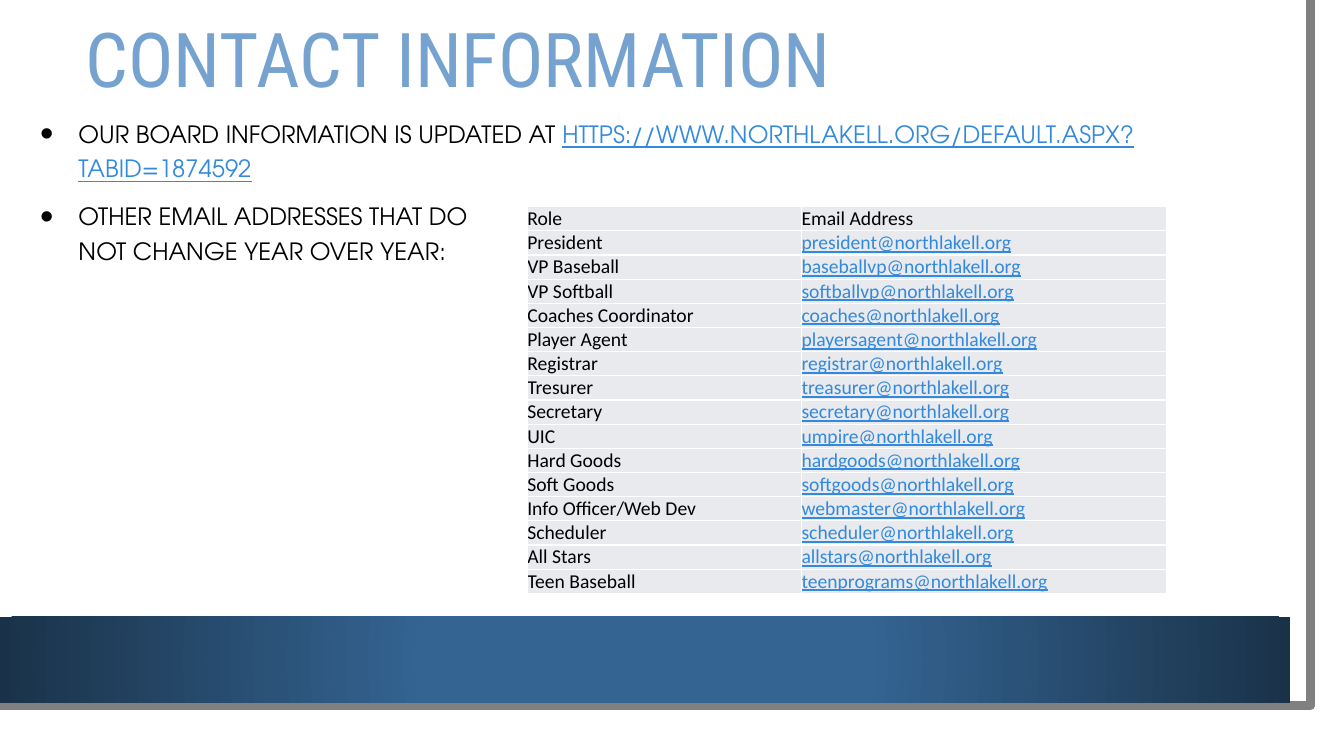
from lxml.etree import SubElement
from pptx import Presentation
from pptx.dml.color import RGBColor
from pptx.enum.shapes import MSO_SHAPE as Preset
from pptx.enum.text import MSO_ANCHOR as Anchor
from pptx.oxml.ns import qn
from pptx.util import Inches, Pt

WIDTH, HEIGHT = 13.33, 7.5
WHITE, BLACK, LINK, CELL = "FFFFFF", "000000", "3289DD", "E8EAEE"
BODY = {"name": "TeX Gyre Adventor", "size": Pt(17)}
TABLE = {"name": "Calibri", "size": Pt(14)}
ROW_HEIGHT = 0.24
COLUMNS = (2.72, 3.62)
CONTACTS = [
    ("President", "president"),
    ("VP Baseball", "baseballvp"),
    ("VP Softball", "softballvp"),
    ("Coaches Coordinator", "coaches"),
    ("Player Agent", "playersagent"),
    ("Registrar", "registrar"),
    ("Tresurer", "treasurer"),
    ("Secretary", "secretary"),
    ("UIC", "umpire"),
    ("Hard Goods", "hardgoods"),
    ("Soft Goods", "softgoods"),
    ("Info Officer/Web Dev", "webmaster"),
    ("Scheduler", "scheduler"),
    ("All Stars", "allstars"),
    ("Teen Baseball", "teenprograms"),
]


def color(hex_string):
    return RGBColor.from_string(hex_string)


def box(*lengths):
    return [Inches(length) for length in lengths]


def add_run(paragraph, text, look, ink=BLACK):
    run = paragraph.add_run()
    run.text = text
    for key, value in look.items():
        setattr(run.font, key, value)
    run.font.color.rgb = color(ink)
    if ink == LINK:
        run.font.underline = True


def add_panel(slide, *lengths):
    panel = slide.shapes.add_shape(Preset.RECTANGLE, *box(*lengths))
    panel.shadow.inherit = False
    panel.line.fill.background()
    return panel


def add_page_edge(slide):
    """Draw the grey line along the right and bottom of the page."""
    outline = slide.shapes.build_freeform(12.82, 0, scale=Inches(1))
    outline.add_line_segments([(12.85, 7.02), (-0.03, 7.01)], close=False)
    edge = outline.convert_to_shape()
    edge.shadow.inherit = False
    edge.fill.background()
    edge.line.color.rgb = color("808080")
    edge.line.width = Pt(6.5)


def add_footer_band(slide):
    band = add_panel(slide, 0, 6.12, 12.8, 0.85)
    band.fill.gradient()
    stops = zip(band.fill.gradient_stops, [(0.34, "346492"), (1, "1A3249")])
    for stop, (position, shade) in stops:
        stop.position = position
        stop.color.rgb = color(shade)
    gradient = band._element.spPr.find(qn("a:gradFill"))
    gradient.remove(gradient.find(qn("a:lin")))
    circle = SubElement(gradient, qn("a:path"), path="circle")
    SubElement(circle, qn("a:fillToRect"), {side: "50000" for side in "ltrb"})


def add_text_frame(slide, *lengths):
    frame = slide.shapes.add_textbox(*box(*lengths)).text_frame
    frame.word_wrap = True
    return frame


def add_title(slide, text):
    frame = add_text_frame(slide, 0.75, 0, 11.37, 1.26)
    frame.vertical_anchor = Anchor.MIDDLE
    heading = frame.paragraphs[0]
    heading.line_spacing = 0.9
    add_run(heading, text, {"name": "Roboto Condensed", "size": Pt(54)}, "75A2CE")


def make_bullet(paragraph):
    paragraph.line_spacing = 1.2
    properties = paragraph._p.get_or_add_pPr()
    properties.set("marL", str(Inches(0.38)))
    properties.set("indent", str(-Inches(0.38)))
    SubElement(properties, qn("a:buSzPct"), val="160000")
    SubElement(properties, qn("a:buFont"), typeface="Arial")
    SubElement(properties, qn("a:buChar"), char="•")


def add_notices(slide):
    frame = add_text_frame(slide, 0.3, 1.08, 12.12, 5.03)
    board = frame.paragraphs[0]
    make_bullet(board)
    add_run(board, "OUR BOARD INFORMATION IS UPDATED AT ", BODY)
    add_run(board, "HTTPS://WWW.NORTHLAKELL.ORG/DEFAULT.ASPX?TABID=1874592", BODY, LINK)
    emails = frame.add_paragraph()
    make_bullet(emails)
    emails.space_before = Pt(10)
    add_run(emails, "OTHER EMAIL ADDRESSES THAT DO", BODY)
    emails.add_line_break()
    add_run(emails, "NOT CHANGE YEAR OVER YEAR:", BODY)


def fill_cell(cell, text, ink):
    for side in ("left", "right", "top", "bottom"):
        setattr(cell, f"margin_{side}", 0)
    cell.vertical_anchor = Anchor.BOTTOM
    add_run(cell.text_frame.paragraphs[0], text, TABLE, ink)
    properties = cell._tc.get_or_add_tcPr()
    for edge in ("lnL", "lnR", "lnT", "lnB"):
        border = SubElement(properties, qn(f"a:{edge}"), w=str(Pt(1)))
        SubElement(SubElement(border, qn("a:solidFill")), qn("a:srgbClr"), val=WHITE)
    cell.fill.solid()
    cell.fill.fore_color.rgb = color(CELL)


def add_contacts(slide):
    rows = [("Role", "Email Address")]
    rows += [(role, f"{mailbox}@northlakell.org") for role, mailbox in CONTACTS]
    size = box(5.23, 2.05, sum(COLUMNS), ROW_HEIGHT * len(rows))
    table = slide.shapes.add_table(len(rows), len(COLUMNS), *size).table
    for column, width in zip(table.columns, COLUMNS):
        column.width = Inches(width)
    for r, texts in enumerate(rows):
        table.rows[r].height = Inches(ROW_HEIGHT)
        for c, text in enumerate(texts):
            fill_cell(table.cell(r, c), text, LINK if "@" in text else BLACK)


def main():
    deck = Presentation()
    deck.slide_width, deck.slide_height = box(WIDTH, HEIGHT)
    slide = deck.slides.add_slide(deck.slide_layouts[6])
    page = add_panel(slide, 0, 0, 13.1, 7.27)
    page.fill.solid()
    page.fill.fore_color.rgb = color(WHITE)
    add_page_edge(slide)
    add_footer_band(slide)
    add_title(slide, "CONTACT INFORMATION")
    add_notices(slide)
    add_contacts(slide)
    deck.save("out.pptx")


if __name__ == "__main__":
    main()
